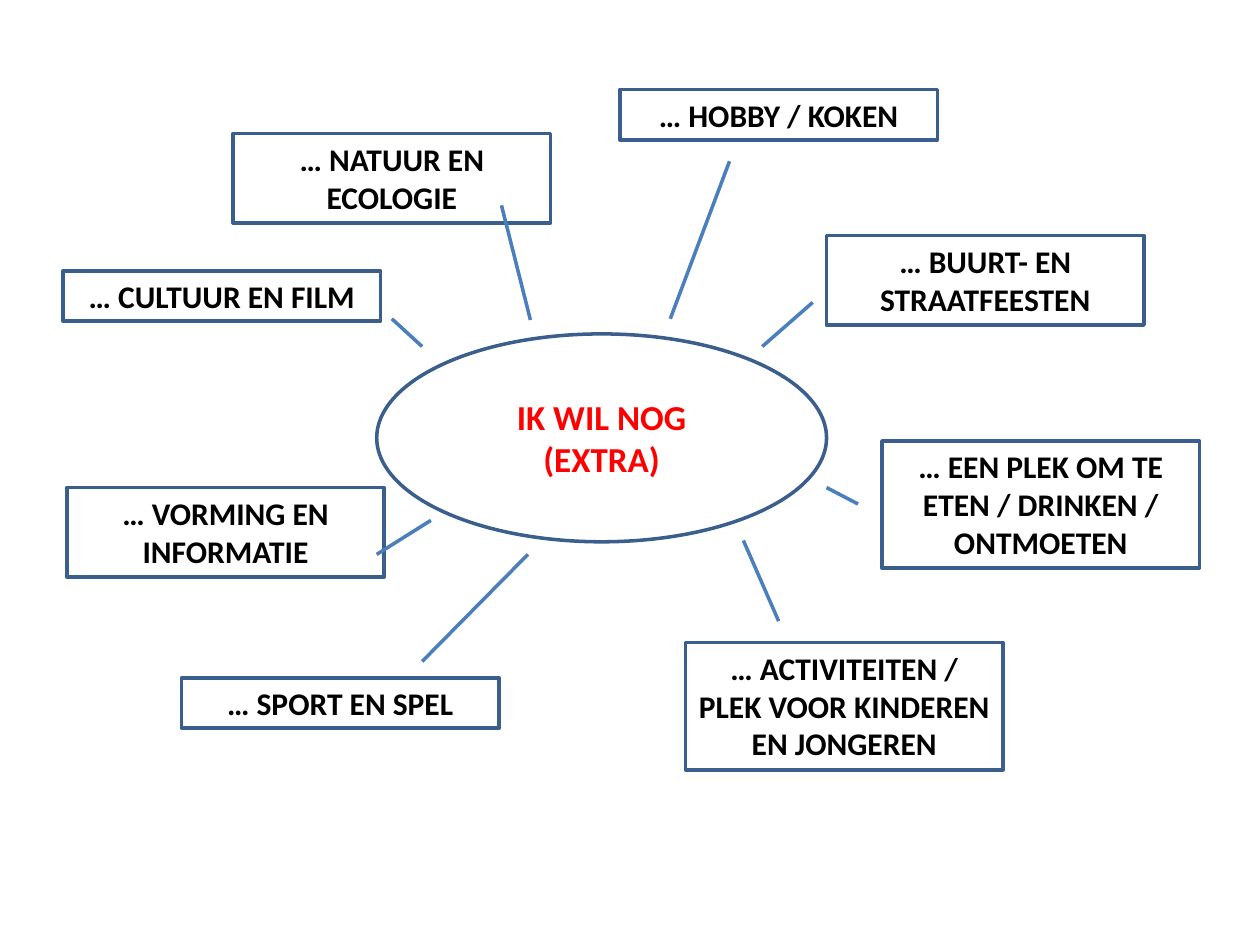
from dataclasses import dataclass

from lxml.etree import SubElement
from pptx import Presentation
from pptx.dml.color import RGBColor
from pptx.enum.shapes import MSO_CONNECTOR, MSO_SHAPE
from pptx.enum.text import MSO_ANCHOR, MSO_AUTO_SIZE, PP_ALIGN
from pptx.oxml.ns import qn
from pptx.slide import Slide
from pptx.util import Inches, Pt

OUTLINE = RGBColor(0x3A, 0x5F, 0x8C)
SPOKE = RGBColor(0x4B, 0x7E, 0xBC)
BLACK = RGBColor(0x00, 0x00, 0x00)
RED = RGBColor(0xFF, 0x00, 0x00)

TOPIC_WIDTH = 2.52
TOPIC_HEIGHTS = {1: 0.4, 2: 0.71, 3: 1.01}

TOPICS = [
    ("… BUURT- EN STRAATFEESTEN", 6.56, 1.87, 2),
    ("… EEN PLEK OM TE ETEN / DRINKEN / ONTMOETEN", 7, 3.5, 3),
    ("… ACTIVITEITEN / PLEK VOOR KINDEREN EN JONGEREN", 5.44, 5.1, 3),
    ("… SPORT EN SPEL", 1.44, 5.38, 1),
    ("… VORMING EN INFORMATIE", 0.53, 3.87, 2),
    ("… CULTUUR EN FILM", 0.5, 2.15, 1),
    ("… NATUUR EN ECOLOGIE", 1.85, 1.06, 2),
    ("… HOBBY / KOKEN", 4.92, 0.71, 1),
]

SPOKES = [
    ((3.98, 1.63), (4.21, 2.54)),
    ((5.79, 1.28), (5.32, 2.53)),
    ((6.45, 2.4), (6.05, 2.75)),
    ((6.81, 4), (6.56, 3.87)),
    ((5.9, 4.29), (6.18, 4.93)),
    ((4.19, 4.4), (3.35, 5.25)),
    ((3.42, 4.13), (2.99, 4.4)),
    ((3.35, 2.75), (3.11, 2.53)),
]


def write_text(frame, text, *, size, color, font_name, anchor):
    frame.word_wrap = True
    frame.vertical_anchor = anchor
    paragraph = frame.paragraphs[0]
    paragraph.alignment = PP_ALIGN.CENTER
    run = paragraph.add_run()
    run.text = text
    run.font.name = font_name
    run.font.size = Pt(size)
    run.font.bold = True
    run.font.color.rgb = color


@dataclass
class MindMap:
    slide: Slide
    font_name: str = "Calibri"
    line_width: float = 2

    def outlined_shape(self, kind, left, top, width, height):
        shape = self.slide.shapes.add_shape(
            kind, Inches(left), Inches(top), Inches(width), Inches(height)
        )
        shape.shadow.inherit = False
        shape.fill.background()
        shape.line.color.rgb = OUTLINE
        shape.line.width = Pt(self.line_width)
        return shape

    def center(self, text, left, top, width, height):
        shape = self.outlined_shape(MSO_SHAPE.OVAL, left, top, width, height)
        write_text(shape.text_frame, text, size=20, color=RED,
                   font_name=self.font_name, anchor=MSO_ANCHOR.MIDDLE)

    def topic(self, text, left, top, line_count):
        shape = self.outlined_shape(
            MSO_SHAPE.RECTANGLE, left, top, TOPIC_WIDTH, TOPIC_HEIGHTS[line_count]
        )
        write_text(shape.text_frame, text, size=18, color=BLACK,
                   font_name=self.font_name, anchor=MSO_ANCHOR.TOP)
        shape.text_frame.auto_size = MSO_AUTO_SIZE.SHAPE_TO_FIT_TEXT

    def spoke(self, start, end):
        connector = self.slide.shapes.add_connector(
            MSO_CONNECTOR.STRAIGHT, *(Inches(value) for value in start + end)
        )
        connector.line.color.rgb = SPOKE
        connector.line.width = Pt(self.line_width)
        SubElement(connector._element.spPr, qn("a:effectLst"))


def main():
    presentation = Presentation()
    presentation.slide_width = Inches(10)
    presentation.slide_height = Inches(7.5)
    blank_layout = presentation.slide_layouts[6]
    mind_map = MindMap(presentation.slides.add_slide(blank_layout))

    mind_map.center("IK WIL NOG (EXTRA)", 2.99, 2.65, 3.57, 1.65)
    for topic in TOPICS:
        mind_map.topic(*topic)
    for start, end in SPOKES:
        mind_map.spoke(start, end)

    presentation.save("out.pptx")


if __name__ == "__main__":
    main()
